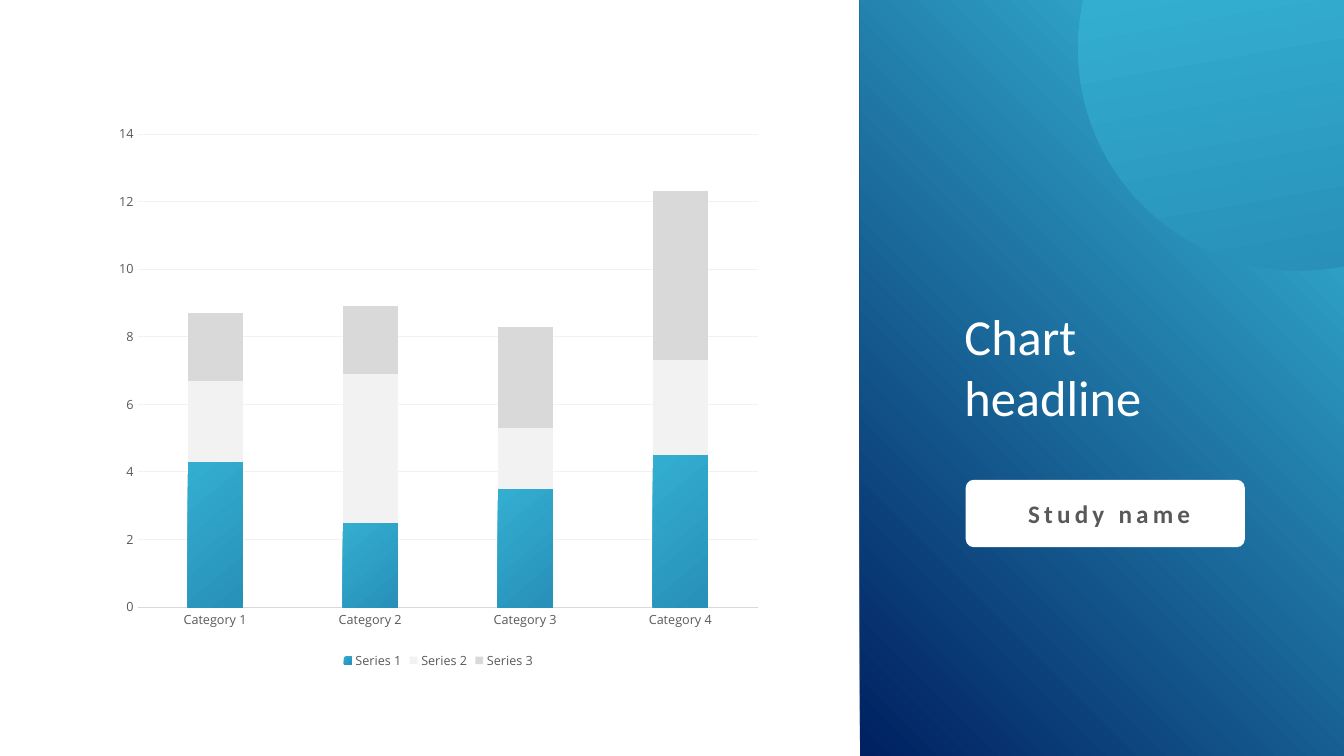
import math
import lxml.etree
import pptx
import pptx.chart.data
import pptx.dml.color
import pptx.enum.chart
import pptx.enum.shapes
import pptx.enum.text
import pptx.oxml
import pptx.oxml.ns
import pptx.util

Pt = pptx.util.Pt
qn = pptx.oxml.ns.qn

CATEGORIES = ["Category 1", "Category 2", "Category 3", "Category 4"]
SERIES = {
    "Series 1": (4.3, 2.5, 3.5, 4.5),
    "Series 2": (2.4, 4.4, 1.8, 2.8),
    "Series 3": (2, 2, 3, 5),
}
HEADLINE = "Chart headline"
STUDY = "Study name"

THEME = {
    "sky": "33AED1",
    "sea": "2890B9",
    "navy": "002060",
    "white": "FFFFFF",
    "ink": "595959",
    "pale": "F2F2F2",
    "grey": "D9D9D9",
    "text_font": "Calibri",
    "chart_font": "Open Sans",
    "headline_size": 36,
    "study_size": 18,
    "chart_size": 9,
}

SLIDE_WIDTH, SLIDE_HEIGHT = 960, 540
PANEL_LEFT = 614.2
CHART_BOX = (75.6, 81.4, 475.2, 399.6)
HEADLINE_BOX = (681.8, 214.6, 207.4, 94.3)
BUTTON_BOX = (689.8, 342.7, 199.4, 48.2)
STUDY_BOX = (709.9, 352.1, 164.9, 28.8)
CIRCLE_X, CIRCLE_Y, CIRCLE_RADIUS = 928.8, 34.6, 158.8
ARC_STEPS = 90


def rgb(name):
    return pptx.dml.color.RGBColor.from_string(THEME[name])


def points(values):
    return [Pt(value) for value in values]


def set_values(target, values):
    for name, value in values.items():
        setattr(target, name, value)


def paint(fill, name):
    fill.solid()
    fill.fore_color.rgb = rgb(name)


def paint_gradient(fill, stops, clockwise=0):
    fill.gradient()
    fill.gradient_angle = (360 - clockwise) % 360
    for stop, (position, name) in zip(fill.gradient_stops, stops):
        stop.position = position
        stop.color.rgb = rgb(name)


def style_font(font, family, size, colour, bold=False):
    set_values(font, {"name": THEME[family], "size": Pt(THEME[size]), "bold": bold})
    font.color.rgb = rgb(colour)


def clear_outline(shape):
    shape.line.fill.background()
    shape.shadow.inherit = False


def add_panel(page):
    panel = page.shapes.add_shape(
        pptx.enum.shapes.MSO_SHAPE.RECTANGLE,
        *points((PANEL_LEFT, 0, SLIDE_WIDTH - PANEL_LEFT, SLIDE_HEIGHT)),
    )
    clear_outline(panel)
    paint_gradient(panel.fill, [(0.12, "sky"), (1, "navy")])
    gradient = panel._element.spPr.find(qn("a:gradFill"))
    gradient.remove(gradient.find(qn("a:lin")))
    radial = lxml.etree.SubElement(gradient, qn("a:path"), {"path": "circle"})
    lxml.etree.SubElement(radial, qn("a:fillToRect"), {"l": "100000", "b": "100000"})


def add_stacked_chart(page):
    data = pptx.chart.data.CategoryChartData()
    data.categories = CATEGORIES
    for name, values in SERIES.items():
        data.add_series(name, values)
    chart = page.shapes.add_chart(
        pptx.enum.chart.XL_CHART_TYPE.COLUMN_STACKED, *points(CHART_BOX), data
    ).chart
    set_values(chart, {"has_title": False, "has_legend": True})
    style_font(chart.font, "chart_font", "chart_size", "ink")
    set_values(chart.legend, {
        "position": pptx.enum.chart.XL_LEGEND_POSITION.BOTTOM,
        "include_in_layout": False,
    })
    plot = chart.plots[0]
    set_values(plot, {"gap_width": 182, "overlap": 100, "vary_by_categories": False})
    first, second, third = plot.series
    paint_gradient(first.format.fill, [(0, "sky"), (1, "sea")], 50)
    paint(second.format.fill, "pale")
    paint(third.format.fill, "grey")

    no_tick = pptx.enum.chart.XL_TICK_MARK.NONE
    for axis in (chart.category_axis, chart.value_axis):
        set_values(axis, {"major_tick_mark": no_tick, "minor_tick_mark": no_tick})
    chart.value_axis.has_major_gridlines = True
    chart.value_axis.format.line.fill.background()
    for line, colour in (
        (chart.category_axis.format.line, "grey"),
        (chart.value_axis.major_gridlines.format.line, "pale"),
    ):
        line.width = Pt(0.75)
        line.color.rgb = rgb(colour)


def add_button(page):
    button = page.shapes.add_shape(
        pptx.enum.shapes.MSO_SHAPE.ROUNDED_RECTANGLE, *points(BUTTON_BOX)
    )
    button.adjustments[0] = 0.12
    clear_outline(button)
    paint(button.fill, "white")


def add_cropped_circle(page):
    top = math.pi + math.asin(CIRCLE_Y / CIRCLE_RADIUS)
    right = math.acos((SLIDE_WIDTH - CIRCLE_X) / CIRCLE_RADIUS)
    angles = [top + (right - top) * step / ARC_STEPS for step in range(ARC_STEPS + 1)]
    arc = [
        points((CIRCLE_X + CIRCLE_RADIUS * math.cos(angle),
                CIRCLE_Y + CIRCLE_RADIUS * math.sin(angle)))
        for angle in angles
    ]
    builder = page.shapes.build_freeform(Pt(SLIDE_WIDTH), 0)
    builder.add_line_segments(arc, close=True)
    circle = builder.convert_to_shape()
    clear_outline(circle)
    paint_gradient(circle.fill, [(0, "sea"), (1, "sky")], 260)


def add_text(page, place, text, size, colour, bold=False):
    box = page.shapes.add_textbox(*points(place))
    box.text_frame.word_wrap = True
    para = box.text_frame.paragraphs[0]
    span = para.add_run()
    span.text = text
    style_font(span.font, "text_font", size, colour, bold)
    return para, span


def main():
    deck = pptx.Presentation()
    set_values(deck, {"slide_width": Pt(SLIDE_WIDTH), "slide_height": Pt(SLIDE_HEIGHT)})
    page = deck.slides.add_slide(deck.slide_layouts[6])
    add_panel(page)
    add_stacked_chart(page)
    add_text(page, HEADLINE_BOX, HEADLINE, "headline_size", "white")
    add_button(page)
    add_cropped_circle(page)
    para, span = add_text(page, STUDY_BOX, STUDY, "study_size", "ink", True)
    para.alignment = pptx.enum.text.PP_ALIGN.CENTER
    span.font._element.set("spc", "300")
    deck.save("out.pptx")


if __name__ == "__main__":
    main()
